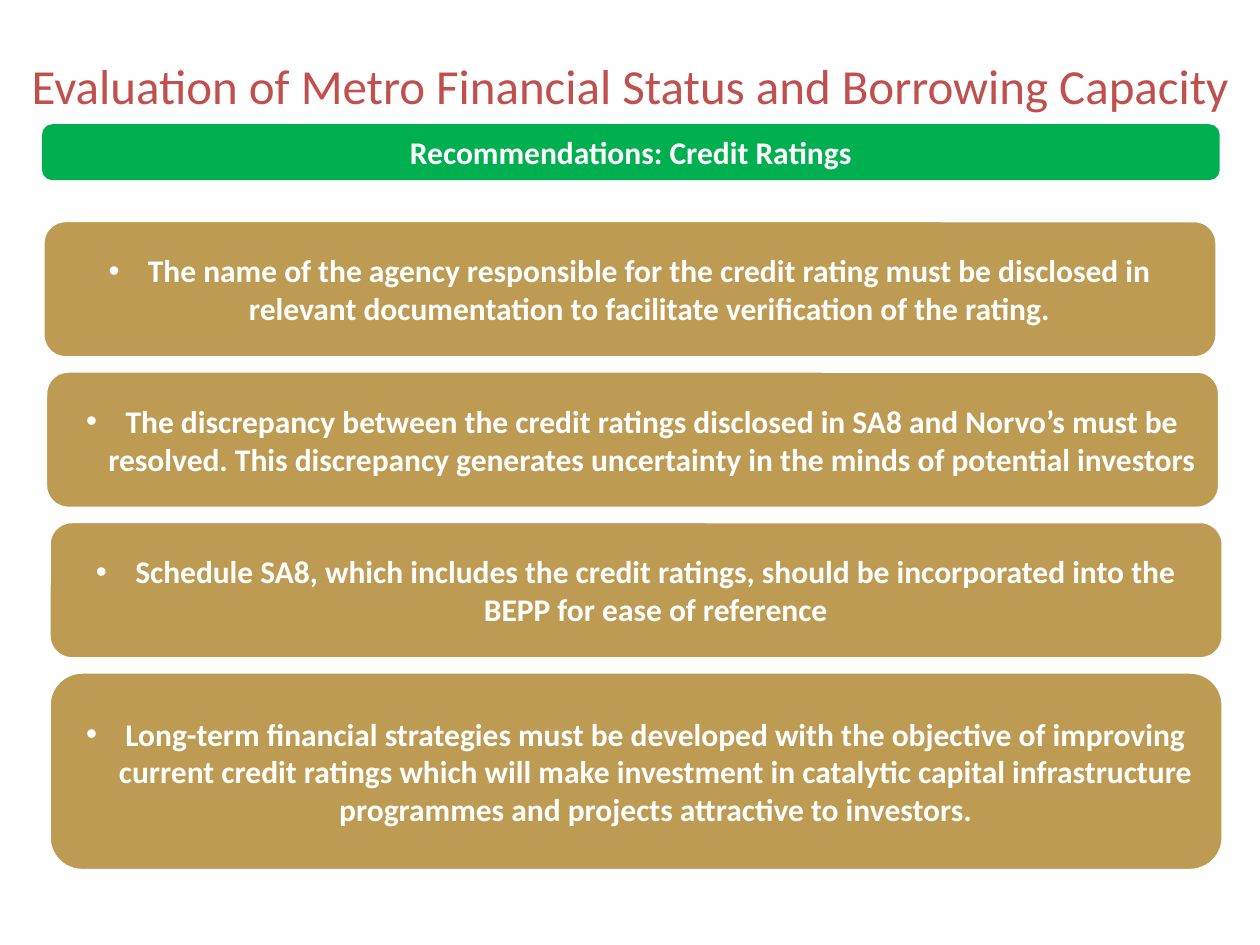
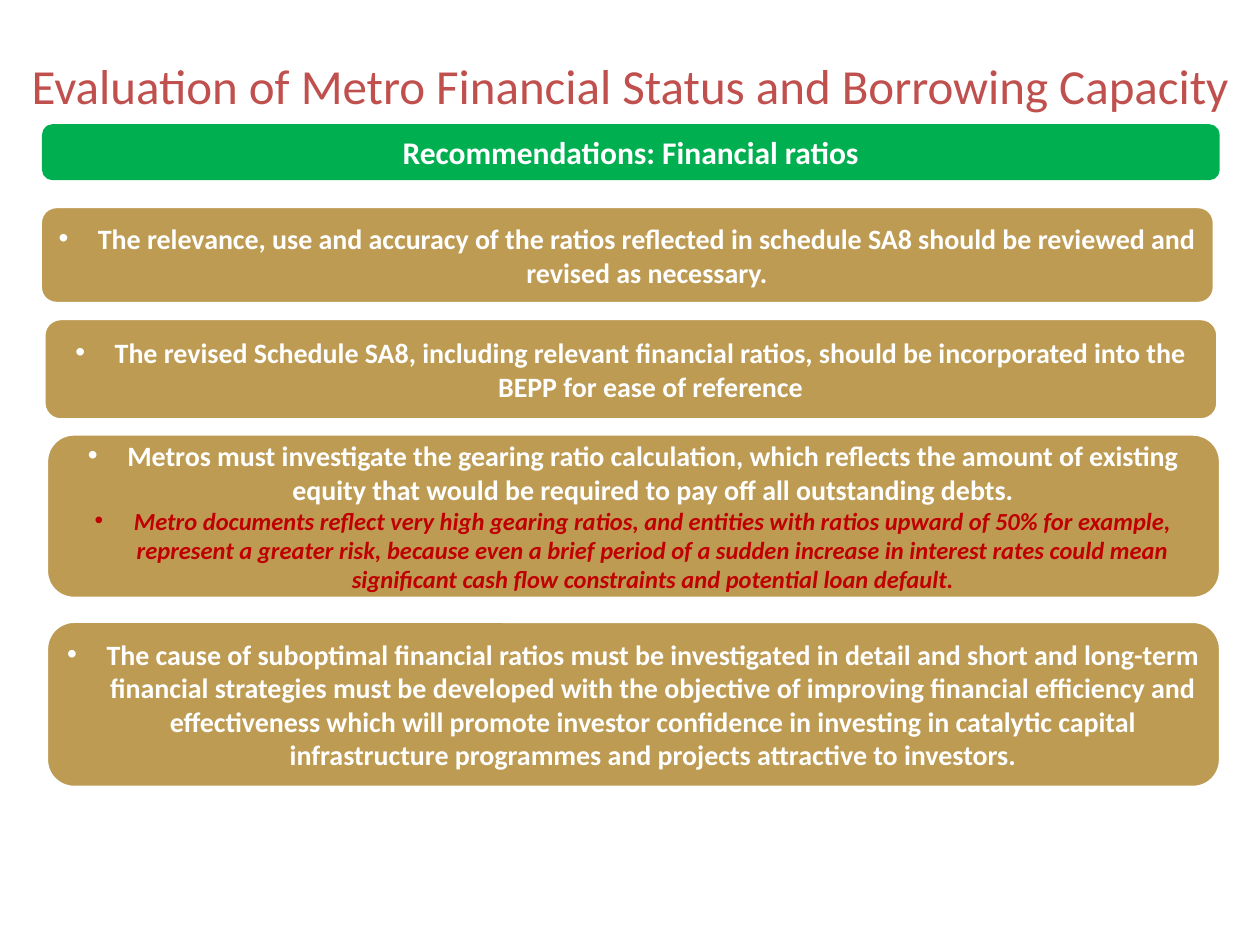
import pptx
import pptx.dml.color
import pptx.enum.shapes
import pptx.enum.text
import pptx.util
import lxml.etree

Pt = pptx.util.Pt
COLOURS = {"title": "C0504D", "band": "00B050", "card": "BD9B53",
           "white": "FFFFFF", "warning": "C00000"}
FONT = "Calibri"
TITLE = "Evaluation of Metro Financial Status and Borrowing Capacity"
TITLE_ONLY_LAYOUT = 5
BULLET_INDENT = Pt(22.5)
CARD_WIDTH = 671

BODY = {"size": Pt(18), "bold": True}
SMALL_BODY = {"size": Pt(16), "bold": True}
WARNING = {"size": Pt(14), "bold": True, "italic": True}

# Each card: left, top, height, paragraphs of (text, format, colour)
SLIDES = [
    ("Recommendations: Credit Ratings", [
        (24.5, 126, 78.5, [
            ("The name of the agency responsible for the credit rating must be disclosed in "
             "relevant documentation to facilitate verification of the rating.", BODY, "white")]),
        (26, 212, 78.5, [
            ("The discrepancy between the credit ratings disclosed in SA8 and Norvo’s must be "
             "resolved. This discrepancy generates uncertainty in the minds of potential "
             "investors", BODY, "white")]),
        (28, 298, 78.5, [
            ("Schedule SA8, which includes the credit ratings, should be incorporated into the "
             "BEPP for ease of reference", BODY, "white")]),
        (28, 384, 113.5, [
            ("Long-term financial strategies must be developed with the objective of improving "
             "current credit ratings which will make investment in catalytic capital "
             "infrastructure programmes and projects attractive to investors.", BODY, "white")]),
    ]),
    ("Recommendations: Financial ratios", [
        (23, 118, 55.5, [
            ("The relevance, use and accuracy of the ratios reflected in schedule SA8 should be "
             "reviewed and revised as necessary.", SMALL_BODY, "white")]),
        (25, 182, 58, [
            ("The revised Schedule SA8, including relevant financial ratios, should be "
             "incorporated into the BEPP for ease of reference", SMALL_BODY, "white")]),
        (26.5, 248, 94, [
            ("Metros must investigate the gearing ratio calculation, which reflects the amount "
             "of existing equity that would be required to pay off all outstanding debts.",
             SMALL_BODY, "white"),
            ("Metro documents reflect very high gearing ratios, and entities with ratios upward "
             "of 50% for example, represent a greater risk, because even a brief period of a "
             "sudden increase in interest rates could mean significant cash flow constraints "
             "and potential loan default.", WARNING, "warning")]),
        (26.5, 355, 95, [
            ("The cause of suboptimal financial ratios must be investigated in detail and short "
             "and long-term financial strategies must be developed with the objective of "
             "improving financial efficiency and effectiveness which will promote investor "
             "confidence in investing in catalytic capital infrastructure programmes and "
             "projects attractive to investors.", SMALL_BODY, "white")]),
    ]),
]


def write_paragraph(para, text, format_values, colour):
    para.alignment = pptx.enum.text.PP_ALIGN.CENTER
    span = para.add_run()
    span.text = text
    for name, value in {"name": FONT, **format_values}.items():
        setattr(span.font, name, value)
    span.font.color.rgb = pptx.dml.color.RGBColor.from_string(COLOURS[colour])


def add_rounded_box(page, bounds, fill, line, paragraphs, bulleted):
    box = page.shapes.add_shape(pptx.enum.shapes.MSO_SHAPE.ROUNDED_RECTANGLE,
                                *[Pt(length) for length in bounds])
    box.shadow.inherit = False
    box.fill.solid()
    box.fill.fore_color.rgb = pptx.dml.color.RGBColor.from_string(COLOURS[fill])
    box.line.color.rgb = pptx.dml.color.RGBColor.from_string(COLOURS[line])
    box.line.width = Pt(2)
    frame = box.text_frame
    frame.word_wrap = True
    frame.vertical_anchor = pptx.enum.text.MSO_ANCHOR.MIDDLE
    for index, content in enumerate(paragraphs):
        para = frame.add_paragraph() if index else frame.paragraphs[0]
        write_paragraph(para, *content)
        if bulleted:
            properties = para._p.get_or_add_pPr()
            properties.set("marL", str(BULLET_INDENT))
            properties.set("indent", str(-BULLET_INDENT))
            for tag, name, value in (("a:buFont", "typeface", "Arial"),
                                     ("a:buChar", "char", "•")):
                bullet = lxml.etree.SubElement(properties, pptx.oxml.ns.qn(tag))
                bullet.set(name, value)


deck = pptx.Presentation()
deck.slide_width = Pt(720)
deck.slide_height = Pt(540)

for heading, cards in SLIDES:
    page = deck.slides.add_slide(deck.slide_layouts[TITLE_ONLY_LAYOUT])

    title = page.shapes.title
    title_bounds = {"left": 12, "top": 30, "width": 696, "height": 37}
    for name, length in title_bounds.items():
        setattr(title, name, Pt(length))
    title_frame = {"margin_left": 0, "margin_top": 0, "margin_right": 0, "margin_bottom": 0,
                   "auto_size": pptx.enum.text.MSO_AUTO_SIZE.NONE,
                   "vertical_anchor": pptx.enum.text.MSO_ANCHOR.MIDDLE}
    for name, value in title_frame.items():
        setattr(title.text_frame, name, value)
    write_paragraph(title.text_frame.paragraphs[0], TITLE, {"size": Pt(28)}, "title")

    add_rounded_box(page, (25, 72, CARD_WIDTH, 30), "band", "band",
                    [(heading, BODY, "white")], bulleted=False)
    for left, top, height, paragraphs in cards:
        add_rounded_box(page, (left, top, CARD_WIDTH, height), "card", "white",
                        paragraphs, bulleted=True)

deck.save("out.pptx")
